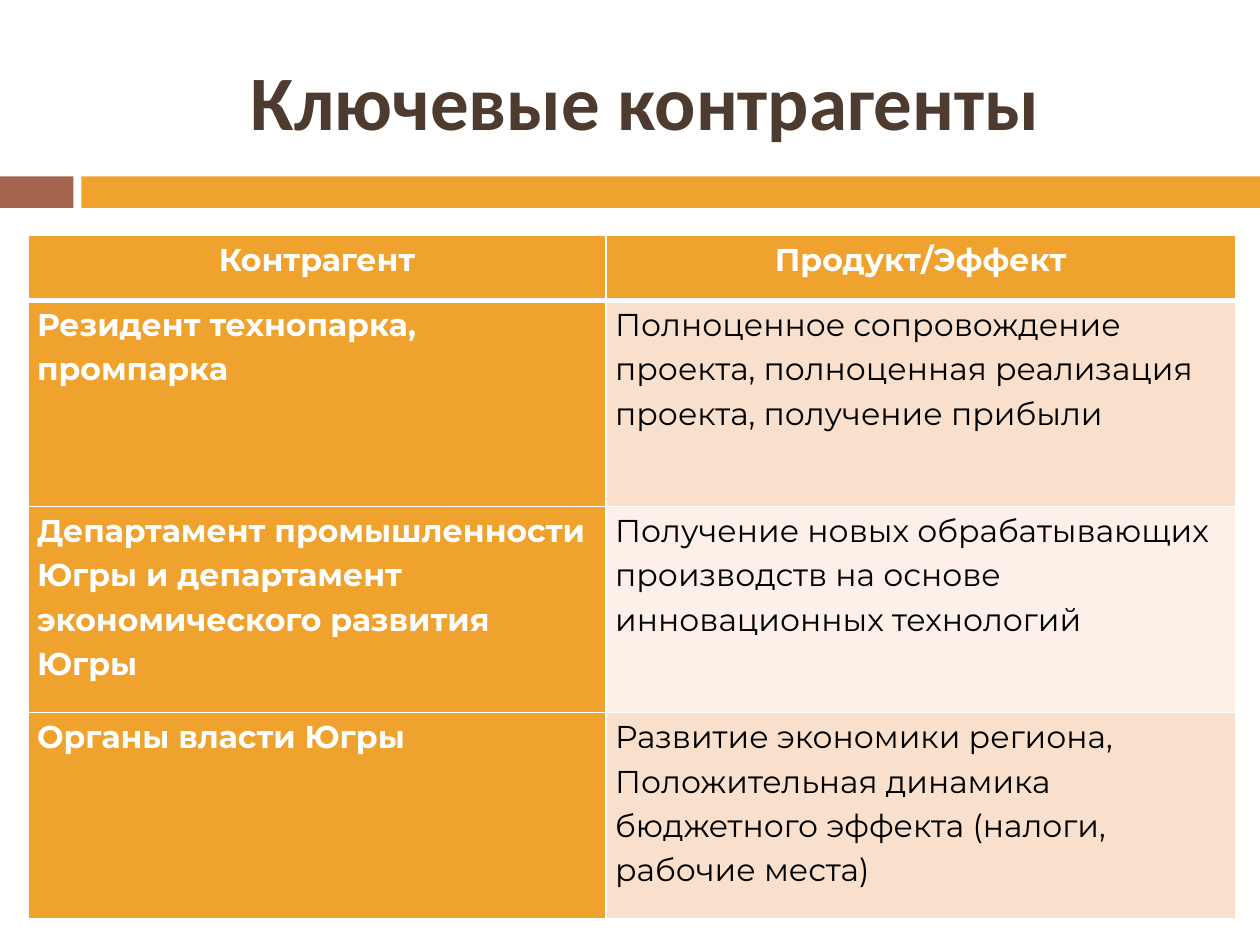
from lxml.etree import SubElement
from pptx import Presentation
from pptx.dml.color import RGBColor
from pptx.enum.shapes import MSO_SHAPE as Shape
from pptx.enum.text import MSO_ANCHOR as Anchor, PP_ALIGN as Align
from pptx.oxml.ns import qn
from pptx.util import Pt

ORANGE = RGBColor(0xF0, 0xA2, 0x2E)
BROWN = RGBColor(0xA5, 0x64, 0x4E)
DARK_BROWN = RGBColor(0x4E, 0x3B, 0x30)
PEACH = RGBColor(0xF9, 0xE0, 0xCD)
LIGHT_PEACH = RGBColor(0xFC, 0xF0, 0xE8)
WHITE = RGBColor(0xFF, 0xFF, 0xFF)
BLACK = RGBColor(0, 0, 0)

ROWS = [
    ("Контрагент", "Продукт/Эффект"),
    ("Резидент технопарка, промпарка",
     "Полноценное сопровождение проекта, полноценная реализация проекта, "
     "получение прибыли"),
    ("Департамент промышленности Югры и департамент экономического развития Югры",
     "Получение новых обрабатывающих производств на основе инновационных технологий"),
    ("Органы власти Югры",
     "Развитие экономики региона, Положительная динамика бюджетного эффекта "
     "(налоги, рабочие места)"),
]
COLUMN_WIDTHS = (330.4, 359.6)
HEADER_HEIGHT, BODY_HEIGHT = 37.5, 117.8


def set_font(paragraph, name, size, color, bold):
    font = paragraph.font
    font.name, font.size, font.bold = name, Pt(size), bold
    font.color.rgb = color


def add_title(slide, text):
    title = slide.shapes.title
    title.left, title.top, title.width, title.height = Pt(48), Pt(18), Pt(642), Pt(78)
    frame = title.text_frame
    frame.text = text
    frame.vertical_anchor = Anchor.MIDDLE
    paragraph = frame.paragraphs[0]
    paragraph.alignment = Align.CENTER
    set_font(paragraph, "Calibri", 44, DARK_BROWN, True)


def add_bar(slide, left, width, color):
    bar = slide.shapes.add_shape(Shape.RECTANGLE, Pt(left), Pt(100.8), Pt(width), Pt(18))
    bar.shadow.inherit = False
    bar.fill.solid()
    bar.fill.fore_color.rgb = color
    bar.line.fill.background()


def set_borders(cell, top, bottom):
    """Draw white borders; the line elements must come before the fill."""
    properties = cell._tc.get_or_add_tcPr()
    widths = {"a:lnL": 1, "a:lnR": 1, "a:lnT": top, "a:lnB": bottom}
    for index, (tag, width) in enumerate(widths.items()):
        line = SubElement(properties, qn(tag), w=str(Pt(width)))
        fill = SubElement(line, qn("a:solidFill"))
        SubElement(fill, qn("a:srgbClr"), val=str(WHITE))
        properties.insert(index, line)


def format_cell(cell, text, row, column):
    is_header = row == 0
    is_strong = is_header or column == 0
    cell.text = text
    cell.margin_left = cell.margin_right = Pt(5.2)
    cell.margin_top = cell.margin_bottom = 0
    cell.fill.solid()
    cell.fill.fore_color.rgb = (
        ORANGE if is_strong else PEACH if row % 2 else LIGHT_PEACH)
    paragraph = cell.text_frame.paragraphs[0]
    paragraph.alignment = Align.CENTER if is_header else Align.LEFT
    paragraph.line_spacing = 1.15
    set_font(paragraph, "Montserrat", 18, WHITE if is_strong else BLACK, is_strong)
    set_borders(cell, top=3 if row == 1 else 1, bottom=3 if is_header else 1)


def add_table(slide):
    heights = [HEADER_HEIGHT] + [BODY_HEIGHT] * (len(ROWS) - 1)
    table = slide.shapes.add_table(
        len(ROWS), len(COLUMN_WIDTHS), Pt(16), Pt(134.2),
        Pt(sum(COLUMN_WIDTHS)), Pt(sum(heights))).table
    for column, width in zip(table.columns, COLUMN_WIDTHS):
        column.width = Pt(width)
    for row_index, (texts, height) in enumerate(zip(ROWS, heights)):
        table.rows[row_index].height = Pt(height)
        for column_index, text in enumerate(texts):
            format_cell(table.cell(row_index, column_index), text,
                        row_index, column_index)


def main():
    presentation = Presentation()
    presentation.slide_width, presentation.slide_height = Pt(720), Pt(540)
    slide = presentation.slides.add_slide(presentation.slide_layouts[5])

    # Band under the title
    add_bar(slide, 0, 42, BROWN)
    add_bar(slide, 46.5, 673.5, ORANGE)

    # Title and table of counterparties
    add_title(slide, "Ключевые контрагенты")
    add_table(slide)
    presentation.save("out.pptx")


if __name__ == "__main__":
    main()
